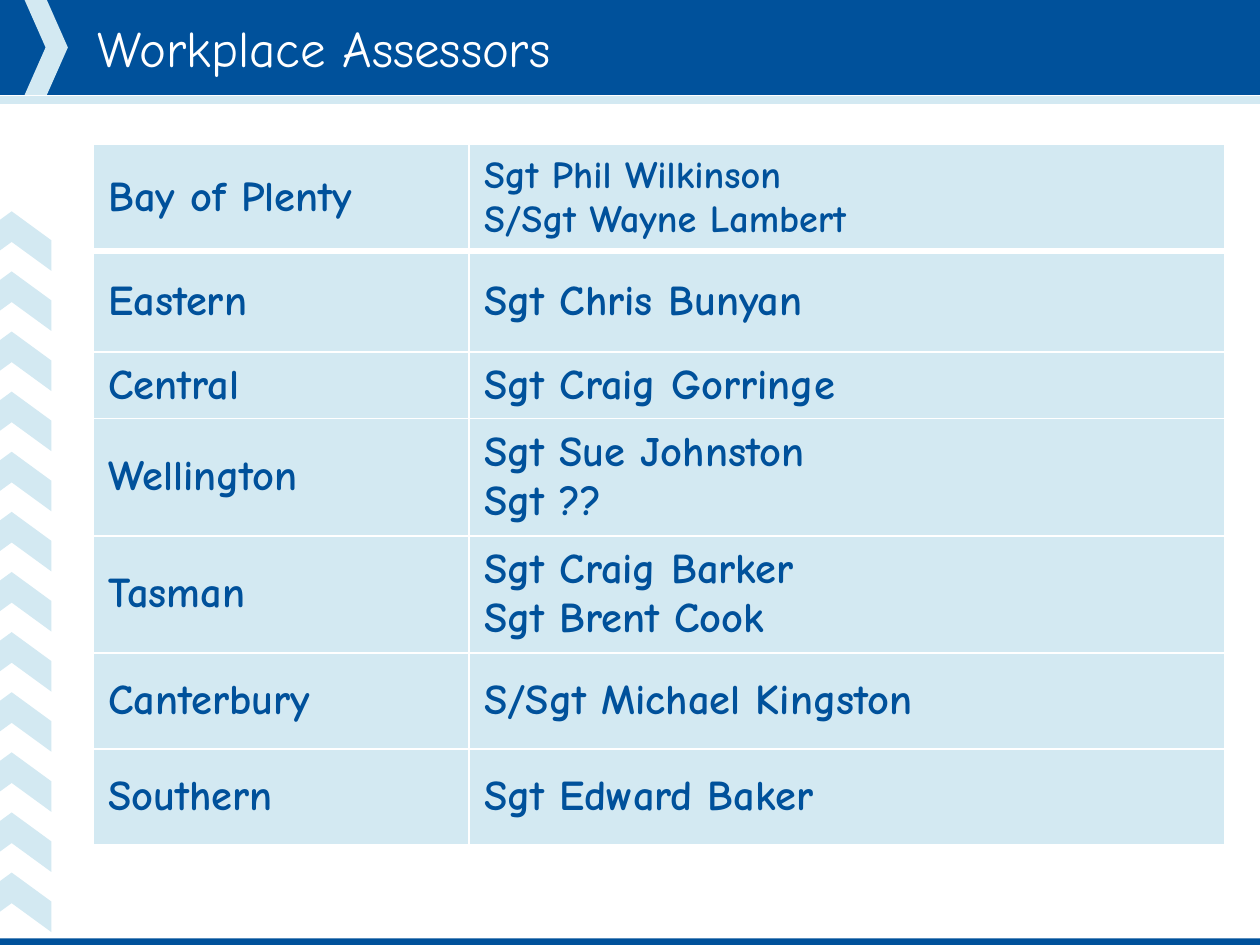
from pptx import Presentation
from pptx.dml.color import RGBColor
from pptx.enum.shapes import MSO_SHAPE as Geo
from pptx.enum.text import MSO_ANCHOR as Anchor
from pptx.oxml import parse_xml
from pptx.oxml.ns import nsdecls
from pptx.util import Cm, Pt

BLUE = RGBColor(0x00, 0x51, 0x9B)
PALE = RGBColor(0xD3, 0xE9, 0xF2)
WHITE = RGBColor(0xFF, 0xFF, 0xFF)
FONT = "Comic Neue"
WIDE, HIGH = 20.96, 15.72

# district, assessors, text size of the assessors, row height
ROWS = [
    ("Bay of Plenty", "Sgt Phil Wilkinson\nS/Sgt Wayne Lambert", 18, 1.73),
    ("Eastern", "Sgt Chris Bunyan", 20, 1.68),
    ("Central", "Sgt Craig Gorringe", 20, 1.04),
    ("Wellington", "Sgt Sue Johnston\nSgt ??", 20, 1.47),
    ("Tasman", "Sgt Craig Barker\nSgt Brent Cook", 20, 1.6),
    ("Canterbury", "S/Sgt Michael Kingston", 20, 1.6),
    ("Southern", "Sgt Edward Baker", 20, 1.6),
]


def add_form(slide, geo, box, color):
    form = slide.shapes.add_shape(geo, *map(Cm, box))
    form.shadow.inherit = False
    form.fill.solid()
    form.fill.fore_color.rgb = color
    form.line.fill.background()
    if geo == Geo.CHEVRON:
        form.adjustments[0] = 0.486
    return form


def set_text(frame, text, size, color, bold):
    frame.text = text
    for par in frame.paragraphs:
        for run in par.runs:
            font = run.font
            font.name, font.size, font.bold = FONT, Pt(size), bold
            font.color.rgb = color


def add_header(slide, left, top, width, height):
    add_form(slide, Geo.RECTANGLE, (left, top, width, height), BLUE)
    add_form(slide, Geo.CHEVRON, (left + 0.41, top, 0.72, height), PALE)
    add_form(slide, Geo.RECTANGLE, (left, top + height + 0.02, width, 0.13), PALE)
    title = slide.shapes.add_textbox(
        Cm(left + 1.37), Cm(top), Cm(width - 2.44), Cm(height))
    frame = title.text_frame
    frame.word_wrap = True
    frame.vertical_anchor = Anchor.MIDDLE
    set_text(frame, "Workplace Assessors", 24, WHITE, False)


def add_trail(slide, left, top, count, step):
    """Stack chevrons that point up along the left edge."""
    for i in range(count):
        mark = add_form(slide, Geo.CHEVRON, (left, top + i * step, 0.99, 1.32), PALE)
        mark.rotation = 270


def set_edges(cell, upper, lower):
    props = cell._tc.get_or_add_tcPr()
    for side, width in (("L", 1), ("R", 1), ("T", upper), ("B", lower)):
        props.append(parse_xml(
            f'<a:ln{side} {nsdecls("a")} w="{Pt(width)}"><a:solidFill>'
            f'<a:srgbClr val="{WHITE}"/></a:solidFill></a:ln{side}>'))


def add_roster(slide, left, top, cols):
    high = sum(row[3] for row in ROWS)
    table = slide.shapes.add_table(
        len(ROWS), len(cols), Cm(left), Cm(top), Cm(sum(cols)), Cm(high)).table
    for col, width in zip(table.columns, cols):
        col.width = Cm(width)
    for i, (place, names, size, height) in enumerate(ROWS):
        table.rows[i].height = Cm(height)
        for j, (text, points) in enumerate(((place, 20), (names, size))):
            cell = table.cell(i, j)
            set_edges(cell, 3 if i == 1 else 1, 3 if i == 0 else 1)
            cell.fill.solid()
            cell.fill.fore_color.rgb = PALE
            cell.vertical_anchor = Anchor.MIDDLE
            set_text(cell.text_frame, text, points, BLUE, True)


def main():
    deck = Presentation()
    deck.slide_width, deck.slide_height = Cm(WIDE), Cm(HIGH)
    slide = deck.slides.add_slide(deck.slide_layouts[6])
    add_header(slide, 0, 0, WIDE, 1.58)
    add_trail(slide, -0.3, 3.35, 12, 1)
    add_form(slide, Geo.RECTANGLE, (0, HIGH - 0.11, WIDE, 0.11), BLUE)
    add_roster(slide, 1.55, 2.4, (6.25, 12.57))
    deck.save("out.pptx")


if __name__ == "__main__":
    main()
